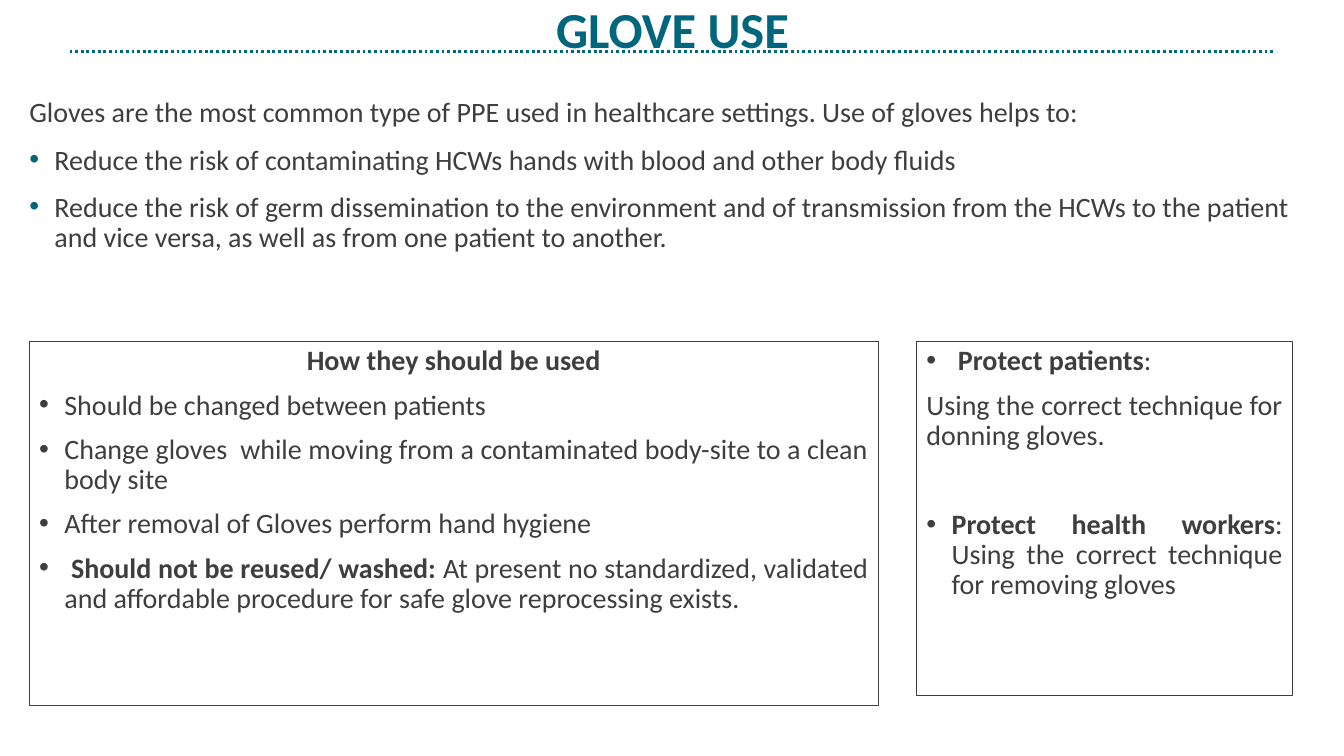
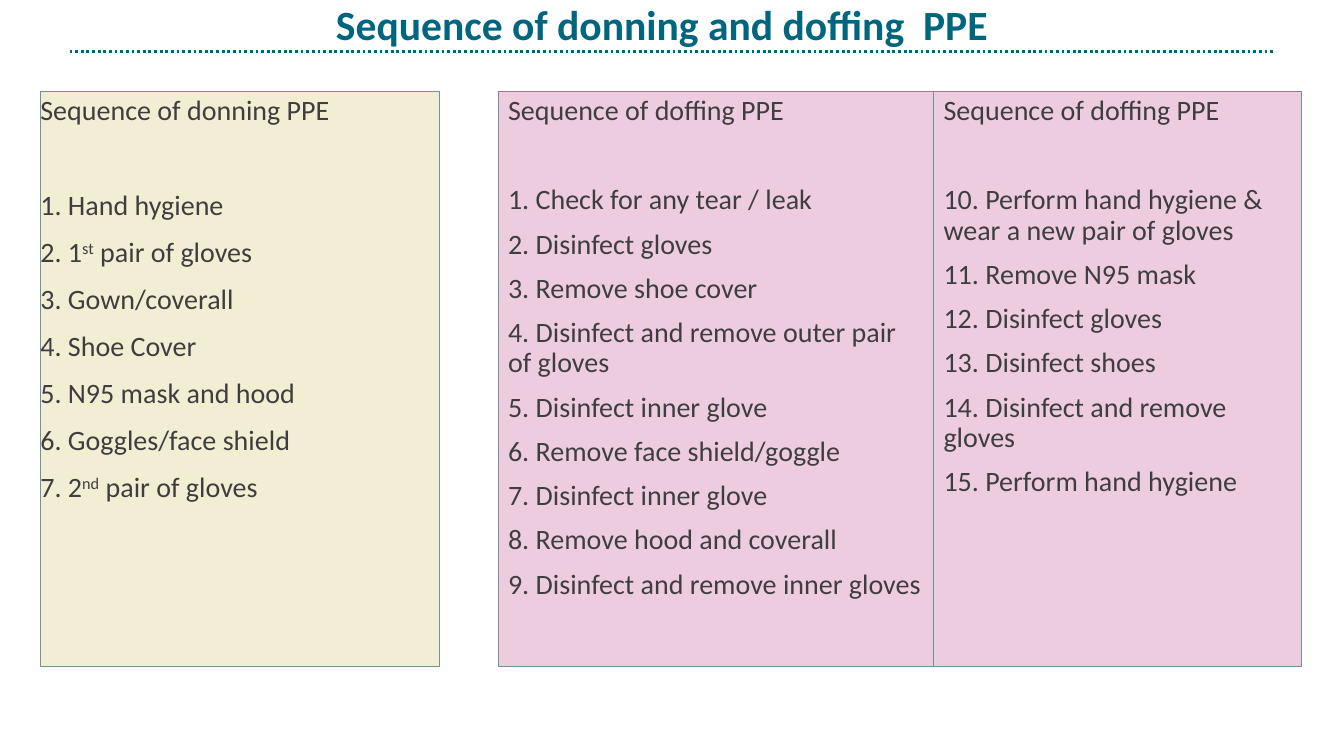
from dataclasses import dataclass
from typing import Optional

from lxml import etree
from pptx import Presentation
from pptx.dml.color import RGBColor
from pptx.enum import dml, shapes, text
from pptx.oxml import ns
from pptx.util import Inches, Pt

TEAL = "00667D"
INK = "3F3E3E"
EDGE = "6F9395"
CREAM = "F2EED3"
PINK = "EDCCE0"
FONT = "Calibri"
BODY_SIZE = 20
INDENT = 0.25
LEFT, CENTER, JUSTIFY = text.PP_ALIGN.LEFT, text.PP_ALIGN.CENTER, text.PP_ALIGN.JUSTIFY


@dataclass(frozen=True)
class Span:
    text: str
    bold: bool = False
    raised: bool = False


@dataclass(frozen=True)
class Para:
    spans: tuple[Span, ...]
    align: text.PP_ALIGN = LEFT
    bullet: Optional[str] = None
    before: float = 10


@dataclass(frozen=True)
class Area:
    left: float
    top: float
    width: float
    height: float


@dataclass(frozen=True)
class Panel:
    area: Area
    paras: list[Para]
    line: str
    fill: Optional[str] = None


def rgb(value: str) -> RGBColor:
    return RGBColor.from_string(value)


def place(box, area: Area) -> None:
    box.left, box.top = Inches(area.left), Inches(area.top)
    box.width, box.height = Inches(area.width), Inches(area.height)


def set_bullet(para, color: Optional[str]) -> None:
    properties = para._p.get_or_add_pPr()
    indent = Inches(INDENT) if color else 0
    properties.set("marL", str(indent))
    properties.set("indent", str(-indent))
    if color is None:
        etree.SubElement(properties, ns.qn("a:buNone"))
        return
    tint = etree.SubElement(properties, ns.qn("a:buClr"))
    etree.SubElement(tint, ns.qn("a:srgbClr")).set("val", color)
    etree.SubElement(properties, ns.qn("a:buFont")).set("typeface", "Arial")
    etree.SubElement(properties, ns.qn("a:buChar")).set("char", "•")


def write(box, paras: list[Para], size: float = BODY_SIZE, color: str = INK, side: float = 0) -> None:
    frame = box.text_frame
    frame.word_wrap = True
    frame.auto_size = text.MSO_AUTO_SIZE.NONE
    frame.vertical_anchor = text.MSO_ANCHOR.TOP
    frame.margin_left = frame.margin_right = Inches(side)
    frame.margin_top = frame.margin_bottom = Inches(0.05)
    for index, item in enumerate(paras):
        para = frame.add_paragraph() if index else frame.paragraphs[0]
        set_bullet(para, item.bullet)
        para.alignment = item.align
        para.line_spacing = 0.9
        para.space_before = Pt(item.before if index else 0)
        para.font.name = FONT
        para.font.size = Pt(size)
        para.font.color.rgb = rgb(color)
        for part in item.spans:
            span = para.add_run()
            span.text = part.text
            span.font.bold = part.bold
            if part.raised:
                span._r.get_or_add_rPr().set("baseline", "30000")


def paint(box, line: str, fill: Optional[str]) -> None:
    box.line.color.rgb = rgb(line)
    box.line.width = Pt(0.75)
    if fill:
        box.fill.solid()
        box.fill.fore_color.rgb = rgb(fill)
    else:
        box.fill.background()


def add_panel(page, panel: Panel) -> None:
    area = panel.area
    box = page.shapes.add_shape(shapes.MSO_SHAPE.RECTANGLE, Inches(area.left), Inches(area.top),
                                Inches(area.width), Inches(area.height))
    box.shadow.inherit = False
    paint(box, panel.line, panel.fill)
    write(box, panel.paras, side=0.1)


def add_page(deck, title: str, title_area: Area, size: float, body_area: Area, paras: list[Para]):
    page = deck.slides.add_slide(deck.slide_layouts[1])
    place(page.shapes.title, title_area)
    write(page.shapes.title, [Para((Span(title, bold=True),), CENTER)], size, TEAL)
    body = page.placeholders[1]
    place(body, body_area)
    write(body, paras)
    return page, body


def move_rule_to_layout(page) -> None:
    rule = page.shapes.add_connector(shapes.MSO_CONNECTOR.STRAIGHT, Inches(0.69), Inches(0.51),
                                     Inches(12.64), Inches(0.51))
    rule.line.color.rgb = rgb(TEAL)
    rule.line.width = Pt(2)
    rule.line.dash_style = dml.MSO_LINE.ROUND_DOT
    etree.SubElement(rule.element.spPr, ns.qn("a:effectLst"))
    page.slide_layout.shapes.element.append(rule.element)


def plain(words: str, **style) -> Para:
    return Para((Span(words),), **style)


def numbered(heading: str, steps: list[tuple[Span, ...]], start: int, before: float, gap: float) -> list[Para]:
    paras = [plain(heading)]
    for number, spans in enumerate(steps, start):
        space = gap if number == start else before
        paras.append(Para((Span(f"{number}. "), *spans), before=space))
    return paras


def steps_of(*lines: str) -> list[tuple[Span, ...]]:
    return [(Span(line),) for line in lines]


def pair_of_gloves(number: str, ending: str) -> tuple[Span, ...]:
    return Span(number), Span(ending, raised=True), Span(" pair of gloves")


def build_glove_use(deck) -> None:
    intro = [
        plain("Gloves are the most common type of PPE used in healthcare settings. Use of gloves helps to:"),
        plain("Reduce the risk of contaminating HCWs hands with blood and other body fluids",
              bullet=TEAL, before=12),
        plain("Reduce the risk of germ dissemination to the environment and of transmission from the HCWs "
              "to the patient and vice versa, as well as from one patient to another.",
              bullet=TEAL, before=12),
    ]
    page, _ = add_page(deck, "GLOVE USE", Area(0.92, 0, 11.5, 0.69), 36,
                       Area(0.29, 0.93, 12.75, 2.36), intro)
    move_rule_to_layout(page)
    listed = {"align": JUSTIFY, "bullet": INK}
    protection = [
        Para((Span(" "), Span("Protect patients", bold=True), Span(":")), **listed),
        plain("Using the correct technique for donning gloves.", align=JUSTIFY),
        Para((Span("Protect health workers", bold=True),
              Span(": Using the correct technique for removing gloves")), before=42, **listed),
    ]
    usage = [
        Para((Span("How they should be used", bold=True),), CENTER),
        plain("Should be changed between patients", **listed),
        plain("Change gloves  while moving from a contaminated body-site to a clean body site", **listed),
        plain("After removal of Gloves perform hand hygiene", **listed),
        Para((Span(" "), Span("Should not be reused/ washed: ", bold=True),
              Span("At present no standardized, validated and affordable procedure for safe glove "
                   "reprocessing exists.")), **listed),
    ]
    add_panel(page, Panel(Area(9.09, 3.39, 3.73, 3.51), protection, INK))
    add_panel(page, Panel(Area(0.29, 3.39, 8.42, 3.61), usage, INK))


def build_sequence(deck) -> None:
    top, height = 0.91, 5.7
    donning = [
        *steps_of("Hand hygiene"),
        pair_of_gloves("1", "st"),
        *steps_of("Gown/coverall", "Shoe Cover", "N95 mask and hood", "Goggles/face shield"),
        pair_of_gloves("2", "nd"),
    ]
    page, body = add_page(deck, "Sequence of donning and doffing  PPE", Area(0.82, 0, 11.5, 0.45), 29.7,
                          Area(0.4, top, 3.96, height),
                          numbered("Sequence of donning PPE", donning, 1, 12, 46))
    paint(body, EDGE, CREAM)
    doffing = steps_of(
        "Check for any tear / leak", "Disinfect gloves", "Remove shoe cover",
        "Disinfect and remove outer pair of gloves", "Disinfect inner glove",
        "Remove face shield/goggle", "Disinfect inner glove", "Remove hood and coverall",
        "Disinfect and remove inner gloves", "Perform hand hygiene & wear a new pair of gloves",
        "Remove N95 mask", "Disinfect gloves", "Disinfect shoes", "Disinfect and remove gloves",
        "Perform hand hygiene",
    )
    left, split = 4.94, 9
    for width, start, steps in ((4.32, 1, doffing[:split]), (3.65, split + 1, doffing[split:])):
        paras = numbered("Sequence of doffing PPE", steps, start, 10, 42)
        add_panel(page, Panel(Area(left, top, width, height), paras, EDGE, PINK))
        left += width


def main() -> None:
    deck = Presentation()
    deck.slide_width, deck.slide_height = Inches(13.33), Inches(7.5)
    build_glove_use(deck)
    build_sequence(deck)
    deck.save("out.pptx")


if __name__ == "__main__":
    main()
